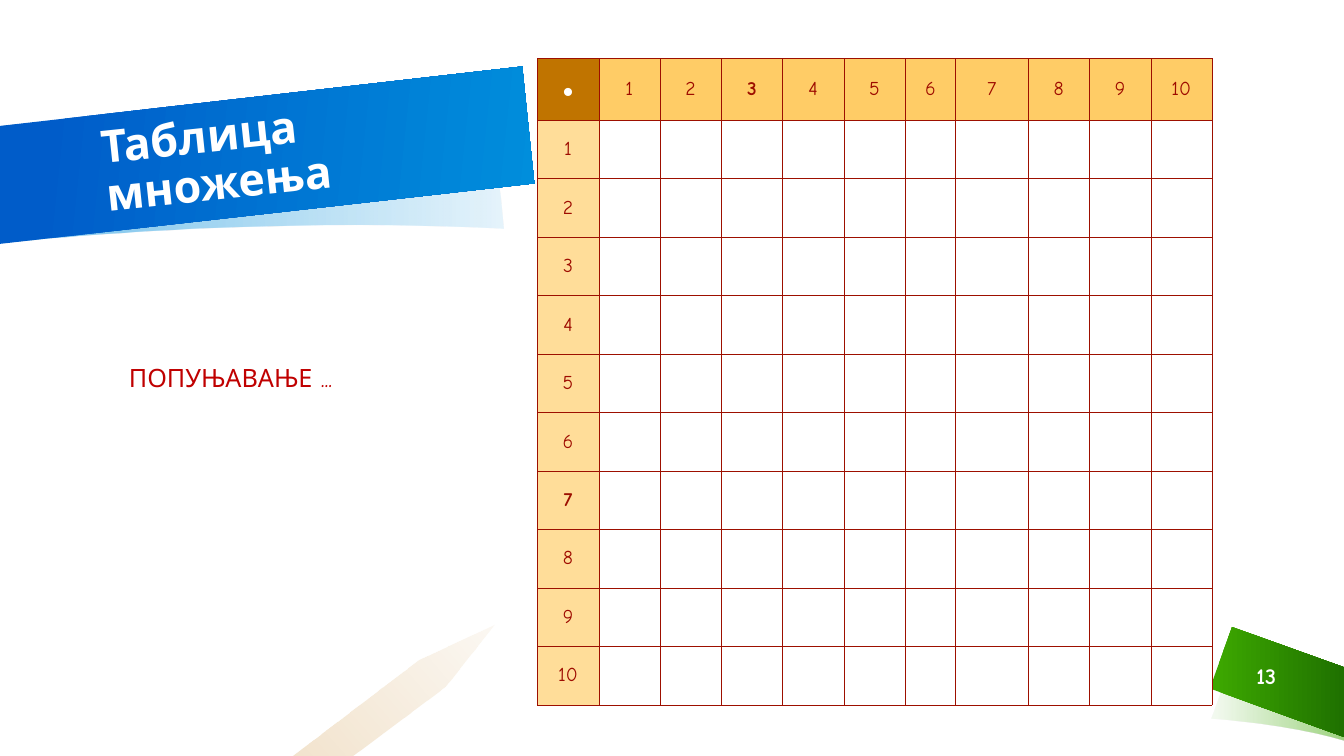
import pptx
import pptx.dml.color
import pptx.enum.text
import pptx.oxml
import pptx.oxml.ns
import pptx.util

SLIDE_WIDTH, SLIDE_HEIGHT = 13.33, 7.5
FONT = "Comic Neue"
COLORS = {
    "white": "FFFFFF",
    "green": "3DA800",
    "dark green": "1F7100",
    "blue": "008EDC",
    "dark blue": "005CC9",
    "brown": "C07400",
    "header": "FFCC66",
    "side": "FFDD99",
    "border": "9D0F00",
    "number": "9E0B00",
    "note": "C00000",
}
FACTORS = range(1, 11)
BOLD_COLUMN, BOLD_ROW = 3, 7
NARROW_COLUMN, WIDE_COLUMN = 6, 7
ALIGN = pptx.enum.text.PP_ALIGN
MIDDLE = pptx.enum.text.MSO_ANCHOR.MIDDLE


def rgb(name):
    """Return the named colour."""
    return pptx.dml.color.RGBColor.from_string(COLORS[name])


def inches(*lengths):
    """Convert lengths in inches."""
    return [pptx.util.Inches(length) for length in lengths]


def curve(start, first, second, end, steps=16):
    """Return points along a cubic curve, both ends included."""
    points = []
    for step in range(steps + 1):
        t = step / steps
        weights = ((1 - t) ** 3, 3 * t * (1 - t) ** 2, 3 * t * t * (1 - t), t ** 3)
        points.append(tuple(
            sum(weight * point[axis] for weight, point in zip(weights, (start, first, second, end)))
            for axis in (0, 1)))
    return points


def add_ribbon(slide, box, points, stops, angle):
    """Draw a gradient outline; points are inches from the box corner, stops are (position, colour, opacity)."""
    left, top = box[:2]
    placed = [inches(left + x, top + y) for x, y in points]
    builder = slide.shapes.build_freeform(*placed[0], scale=1.0)
    builder.add_line_segments(placed[1:], close=True)
    shape = builder.convert_to_shape()
    shape.shadow.inherit = False
    shape.line.fill.background()
    shape.fill.gradient()
    shape.fill.gradient_angle = (360 - angle) % 360
    for stop, (position, color, opacity) in zip(shape.fill.gradient_stops, stops):
        stop.position = position
        stop.color.rgb = rgb(color)
    color_tag = pptx.oxml.ns.qn("a:srgbClr")
    for element, (position, color, opacity) in zip(shape.element.spPr.iter(color_tag), stops):
        if opacity < 1:
            alpha = pptx.oxml.parse_xml(
                f'<a:alpha {pptx.oxml.ns.nsdecls("a")} val="{round(opacity * 100000)}"/>')
            element.append(alpha)


def write(frame, text, size=14, color="number", bold=False, align=ALIGN.LEFT, anchor=None, spacing=None):
    """Fill a text frame with one formatted paragraph."""
    frame.word_wrap = True
    if anchor is not None:
        frame.vertical_anchor = anchor
    paragraph = frame.paragraphs[0]
    paragraph.alignment = align
    paragraph.line_spacing = spacing
    run = paragraph.add_run()
    run.text = text
    run.font.name = FONT
    run.font.size = pptx.util.Pt(size)
    run.font.bold = bold
    run.font.color.rgb = rgb(color)


def add_page_corner(slide, box, number):
    """Draw the green corner ribbon with the page number."""
    left, top, width, height = box
    shadow = [(0.02, 0.93), *curve((0.02, 0.93), (0.02, 0.93), (0.78, 0.98), (width, 1.15)),
              *curve((width, 0.48), (0.72, 0.31), (0.24, 0.32), (0.24, 0.32))]
    add_ribbon(slide, box, shadow, [(0.03, "green", 0.06), (1, "green", 0.5)], 0)
    band = [(width, 0.42), (0.22, 0.02), (0, 0.63), (width, height)]
    add_ribbon(slide, box, band, [(0.03, "green", 1), (1, "dark green", 1)], 0)
    label = slide.shapes.add_textbox(*inches(left + 0.21, top + 0.3, 0.7, 0.4))
    write(label.text_frame, str(number), size=16, color="white", bold=True,
          align=ALIGN.CENTER, anchor=MIDDLE)


def add_title_banner(slide, box, text):
    """Draw the slanted blue banner and lay the title on it."""
    left, top, width, height = box
    shadow = [(4.99, 1.63), *curve((4.87, 0.49), (4.87, 0.49), (3.13, 0.3), (0, 0.61)),
              *curve((0, 1.77), (2.86, 1.48), (4.99, 1.63), (4.99, 1.63))]
    add_ribbon(slide, box, shadow, [(0, "blue", 0.1), (0.88, "blue", 0.5)], 180)
    band = [(0, height), (width, 1.18), (5.18, 0.02), (0, 0.61)]
    add_ribbon(slide, box, band, [(0.09, "dark blue", 1), (1, "blue", 1)], 6)
    title = slide.shapes.title
    title.left, title.top, title.width, title.height = inches(left + 0.92, top + 0.28, 4.33, 1.16)
    title.rotation = 354
    title.text_frame.auto_size = pptx.enum.text.MSO_AUTO_SIZE.NONE
    write(title.text_frame, text, size=32, color="white", bold=True, anchor=MIDDLE, spacing=0.9)
    title.element.getparent().append(title.element)


def add_pencil(slide, box):
    """Draw the pale pencil rising from the bottom edge."""
    width, height = box[2:]
    outline = [(width, 0), (1.25, 0.35), (0, height), (0.6, height), (1.51, 0.62)]
    add_ribbon(slide, box, outline, [(0, "brown", 0.05), (1, "brown", 0.2)], 139)


def format_cell(cell, fill):
    """Give a cell thin borders and a plain fill."""
    properties = cell._tc.get_or_add_tcPr()
    for side in "LRTB":
        properties.append(pptx.oxml.parse_xml(
            f'<a:ln{side} {pptx.oxml.ns.nsdecls("a")} w="3175"><a:solidFill>'
            f'<a:srgbClr val="{COLORS["border"]}"/></a:solidFill></a:ln{side}>'))
    cell.fill.solid()
    cell.fill.fore_color.rgb = rgb(fill)
    cell.vertical_anchor = MIDDLE


def add_multiplication_table(slide, box):
    """Build the empty multiplication grid with its factors."""
    count = len(FACTORS) + 1
    table = slide.shapes.add_table(count, count, *inches(*box)).table
    table.first_row = table.horz_banding = False
    for index in range(count):
        table.rows[index].height = pptx.util.Inches(box[3] / count)
        width = {NARROW_COLUMN: 0.5, WIDE_COLUMN: 0.72}.get(index, box[2] / count)
        table.columns[index].width = pptx.util.Inches(width)
        for column in range(count):
            fill = "header" if index == 0 else "side" if column == 0 else "white"
            format_cell(table.cell(index, column), "brown" if index == column == 0 else fill)
    write(table.cell(0, 0).text_frame, "•", size=32, color="white", align=ALIGN.CENTER)
    for factor in FACTORS:
        for cell, bold in ((table.cell(0, factor), factor == BOLD_COLUMN),
                           (table.cell(factor, 0), factor == BOLD_ROW)):
            write(cell.text_frame, str(factor), color="border" if bold else "number",
                  bold=bold, align=ALIGN.CENTER)


def add_note(slide, box, text):
    """Place the red note under the banner."""
    note = slide.shapes.add_textbox(*inches(*box))
    write(note.text_frame, text, size=18, color="note")


def main():
    """Build and save the slide."""
    presentation = pptx.Presentation()
    presentation.slide_width, presentation.slide_height = inches(SLIDE_WIDTH, SLIDE_HEIGHT)
    slide = presentation.slides.add_slide(presentation.slide_layouts[5])
    slide.background.fill.solid()
    slide.background.fill.fore_color.rgb = rgb("white")
    add_page_corner(slide, (12, 6.2, 1.33, 1.11), 13)
    add_title_banner(slide, (0, 0.64, 5.3, 1.78), "Таблица множења")
    add_pencil(slide, (2.9, 6.2, 2, 1.3))
    add_multiplication_table(slide, (5.33, 0.58, 6.69, 6.38))
    add_note(slide, (1.18, 3.55, 2.72, 0.4), "ПОПУЊАВАЊЕ ...")
    presentation.save("out.pptx")


if __name__ == "__main__":
    main()
